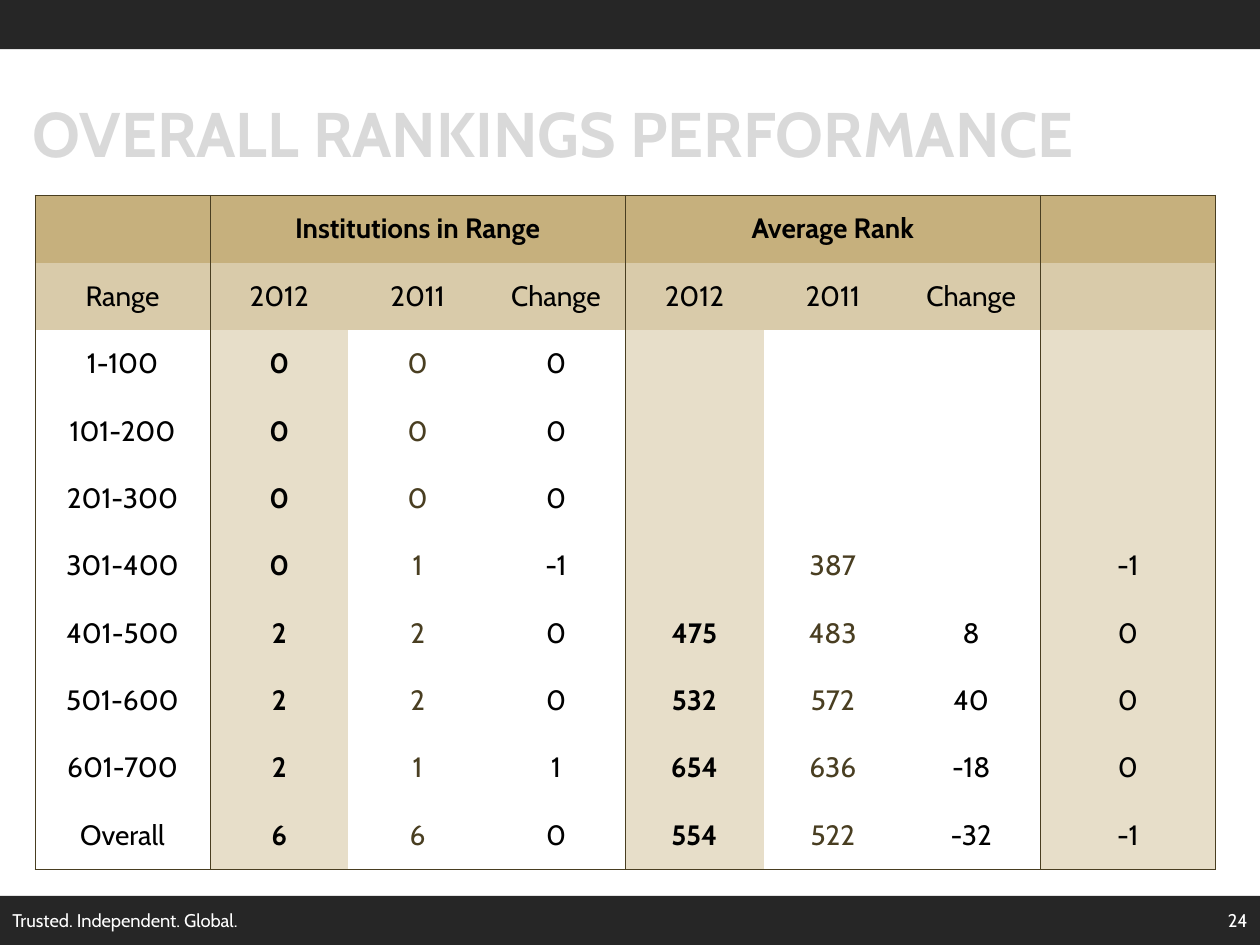
"""Build the overall rankings performance slide."""
import pptx
import pptx.dml.color
import pptx.enum.shapes
import pptx.enum.text
import pptx.oxml.ns
import pptx.util
from lxml import etree

Pt = pptx.util.Pt
RGBColor = pptx.dml.color.RGBColor
PP_ALIGN = pptx.enum.text.PP_ALIGN
MSO_ANCHOR = pptx.enum.text.MSO_ANCHOR

FONT = "Cabin"
BLACK = RGBColor(0x00, 0x00, 0x00)
WHITE = RGBColor(0xFF, 0xFF, 0xFF)
CHARCOAL = RGBColor(0x26, 0x26, 0x26)
TITLE_GREY = RGBColor(0xD9, 0xD9, 0xD9)
BROWN = RGBColor(0x49, 0x3E, 0x21)
GOLD = RGBColor(0xC6, 0xB0, 0x7D)
SAND = RGBColor(0xD9, 0xCB, 0xAA)
CREAM = RGBColor(0xE7, 0xDE, 0xC9)

SLIDE_WIDTH, SLIDE_HEIGHT = 720, 540
BAND_HEIGHT = 28.1
FOOTER_TOP = SLIDE_HEIGHT - BAND_HEIGHT

RANKINGS = [
    ["", "Institutions in Range", "", "", "Average Rank", "", "", ""],
    ["Range", "2012", "2011", "Change", "2012", "2011", "Change", ""],
    ["1-100", "0", "0", "0", "", "", "", ""],
    ["101-200", "0", "0", "0", "", "", "", ""],
    ["201-300", "0", "0", "0", "", "", "", ""],
    ["301-400", "0", "1", "-1", "", "387", "", "-1"],
    ["401-500", "2", "2", "0", "475", "483", "8", "0"],
    ["501-600", "2", "2", "0", "532", "572", "40", "0"],
    ["601-700", "2", "1", "1", "654", "636", "-18", "0"],
    ["Overall", "6", "6", "0", "554", "522", "-32", "-1"],
]
COLUMN_WIDTHS = [100] + [79.1] * 6 + [100]
ROW_HEIGHT = 38.5
GROUP_EDGES = {0, 1, 4, 7, 8}
CURRENT_YEAR_COLUMNS = {1, 4}
PRIOR_YEAR_COLUMNS = {2, 5}
SHADED_COLUMNS = CURRENT_YEAR_COLUMNS | {7}


def style_text(frame, size, color, bold=False, align=PP_ALIGN.LEFT):
    """Format every run of a text frame and centre it vertically."""
    frame.vertical_anchor = MSO_ANCHOR.MIDDLE
    for paragraph in frame.paragraphs:
        paragraph.alignment = align
        for run in paragraph.runs:
            run.font.name = FONT
            run.font.size = Pt(size)
            run.font.bold = bold
            run.font.color.rgb = color


def add_band(slide, top):
    """Add a full-width dark band."""
    band = slide.shapes.add_shape(
        pptx.enum.shapes.MSO_SHAPE.RECTANGLE,
        Pt(0), Pt(top), Pt(SLIDE_WIDTH), Pt(BAND_HEIGHT))
    band.shadow.inherit = False
    band.fill.solid()
    band.fill.fore_color.rgb = CHARCOAL
    band.line.fill.background()


def add_footer_text(slide, text, left, width, align):
    """Add white text on the bottom band."""
    footer = slide.shapes.add_textbox(
        Pt(left), Pt(FOOTER_TOP), Pt(width), Pt(BAND_HEIGHT))
    footer.text_frame.word_wrap = True
    footer.text_frame.text = text
    style_text(footer.text_frame, 10.5, WHITE, align=align)


def set_title(slide, text):
    """Place and format the title placeholder."""
    title = slide.shapes.title
    title.left, title.top = Pt(11.5), Pt(39.6)
    title.width, title.height = Pt(697.7), Pt(72)
    title.text_frame.text = text
    style_text(title.text_frame, 36, TITLE_GREY, bold=True)


def set_borders(cell, ruled_sides):
    """Draw thin rules on the given sides and clear the others."""
    properties = cell._tc.get_or_add_tcPr()
    qn = pptx.oxml.ns.qn
    for side in "LRTB":
        border = etree.SubElement(
            properties, qn(f"a:ln{side}"), w=str(Pt(0.5)))
        if side in ruled_sides:
            fill = etree.SubElement(border, qn("a:solidFill"))
            etree.SubElement(fill, qn("a:srgbClr"), val=str(BROWN))
        else:
            etree.SubElement(border, qn("a:noFill"))


def cell_fill(row, column):
    """Return the background colour for a table position."""
    if row < 2:
        return (GOLD, SAND)[row]
    return CREAM if column in SHADED_COLUMNS else WHITE


def format_cell(cell, text, row, column):
    """Fill in and format one table cell."""
    ruled = {"L": column in GROUP_EDGES, "R": column + 1 in GROUP_EDGES,
             "T": row == 0, "B": row == len(RANKINGS) - 1}
    set_borders(cell, {side for side, shown in ruled.items() if shown})
    cell.fill.solid()
    cell.fill.fore_color.rgb = cell_fill(row, column)
    cell.margin_left = cell.margin_right = Pt(0)
    cell.margin_top = cell.margin_bottom = Pt(0)
    cell.vertical_anchor = MSO_ANCHOR.MIDDLE
    cell.text_frame.text = text
    is_body = row > 1
    color = BROWN if is_body and column in PRIOR_YEAR_COLUMNS else BLACK
    bold = row == 0 or is_body and column in CURRENT_YEAR_COLUMNS
    style_text(cell.text_frame, 16, color, bold, PP_ALIGN.CENTER)


def add_rankings_table(slide):
    """Add the table of institutions and average rank by range."""
    table = slide.shapes.add_table(
        len(RANKINGS), len(COLUMN_WIDTHS), Pt(20), Pt(111.6),
        Pt(sum(COLUMN_WIDTHS)), Pt(ROW_HEIGHT * len(RANKINGS))).table
    table.first_row = table.horz_banding = False
    for column, width in zip(table.columns, COLUMN_WIDTHS):
        column.width = Pt(width)
    for row, values in enumerate(RANKINGS):
        table.rows[row].height = Pt(ROW_HEIGHT)
        for column, text in enumerate(values):
            format_cell(table.cell(row, column), text, row, column)
    for first in CURRENT_YEAR_COLUMNS:
        table.cell(0, first).merge(table.cell(0, first + 2))


def main():
    """Build and save the presentation."""
    presentation = pptx.Presentation()
    presentation.slide_width = Pt(SLIDE_WIDTH)
    presentation.slide_height = Pt(SLIDE_HEIGHT)
    slide = presentation.slides.add_slide(presentation.slide_layouts[5])
    for top in (FOOTER_TOP, 0):
        add_band(slide, top)
    add_rankings_table(slide)
    add_footer_text(slide, "Trusted. Independent. Global.", 0, 552,
                    PP_ALIGN.LEFT)
    add_footer_text(slide, "24", 552, 168, PP_ALIGN.RIGHT)
    set_title(slide, "OVERALL RANKINGS PERFORMANCE")
    presentation.save("out.pptx")


if __name__ == "__main__":
    main()
